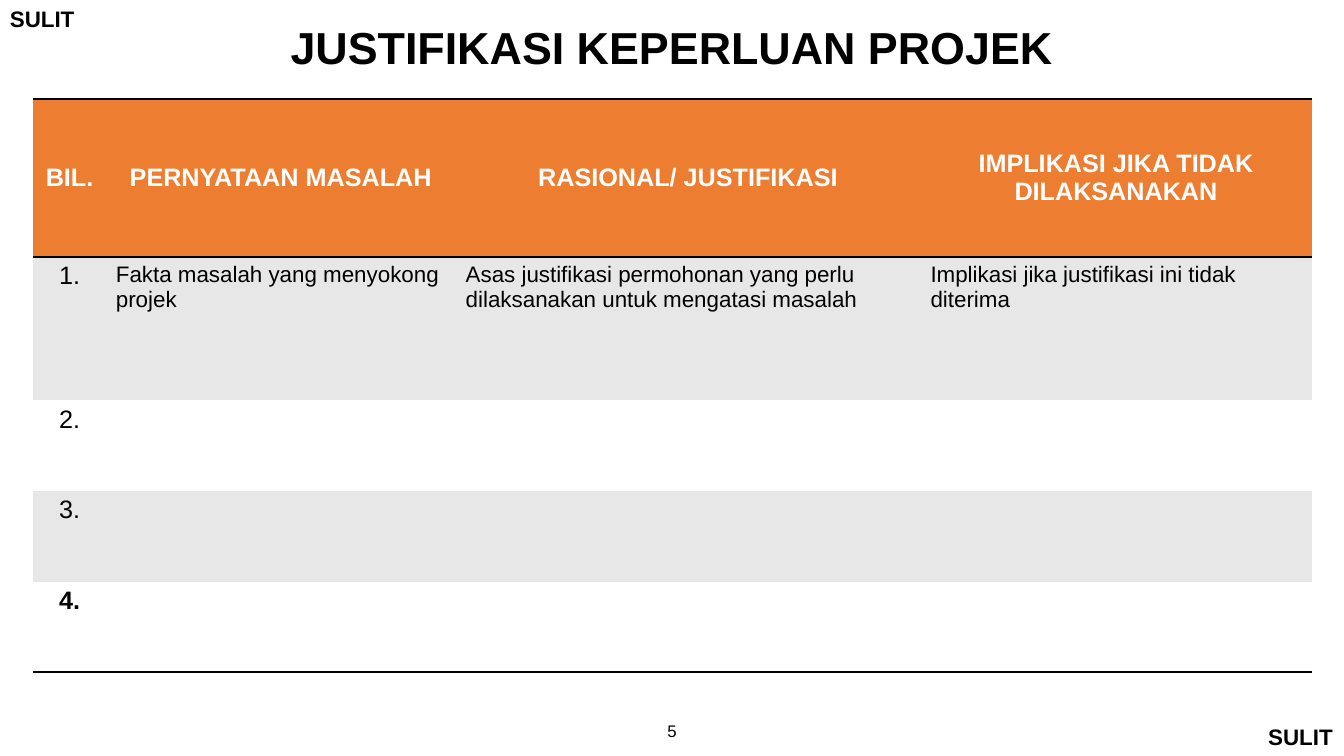
from lxml import etree
from pptx import Presentation
from pptx import util as u
from pptx.dml.color import RGBColor
from pptx.enum import text
from pptx.oxml.ns import qn

COLOURS = {"ink": "000000", "white": "FFFFFF", "header": "ED7D31", "band": "E7E7E7"}
CENTER, LEFT = text.PP_ALIGN.CENTER, text.PP_ALIGN.LEFT
TOP, MIDDLE = text.MSO_ANCHOR.TOP, text.MSO_ANCHOR.MIDDLE


class Deck:
    """Holds the style and the current page."""

    font = "Arial"

    def __init__(self, width, height):
        self.show = Presentation()
        self.show.slide_width = u.Inches(width)
        self.show.slide_height = u.Inches(height)
        self.page = self.show.slides.add_slide(self.show.slide_layouts[6])

    def add_words(self, frame, words, size, bold=False, colour="ink", align=LEFT, spacing=1.0):
        para = frame.paragraphs[0]
        for name, value in {"alignment": align, "line_spacing": spacing}.items():
            setattr(para, name, value)
        span = para.add_run()
        span.text = words
        style = {"name": self.font, "size": u.Pt(size), "bold": bold}
        for name, value in style.items():
            setattr(span.font, name, value)
        span.font.color.rgb = RGBColor.from_string(COLOURS[colour])

    def label(self, place, words, size, wrap=True, anchor=TOP, **style):
        box = self.page.shapes.add_textbox(*map(u.Inches, place))
        for name, value in {"word_wrap": wrap, "vertical_anchor": anchor}.items():
            setattr(box.text_frame, name, value)
        self.add_words(box.text_frame, words, size, **style)

    def border(self, cell, ruled):
        properties = cell._tc.get_or_add_tcPr()
        for side in ("L", "R", "T", "B"):
            line = etree.SubElement(properties, qn(f"a:ln{side}"), w=str(u.Pt(2)))
            if side in ruled:
                fill = etree.SubElement(line, qn("a:solidFill"))
                etree.SubElement(fill, qn("a:srgbClr"), val=COLOURS["ink"])
            else:
                etree.SubElement(line, qn("a:noFill"))

    def cell(self, cell, words, fill, ruled, anchor=TOP, **style):
        self.border(cell, ruled)
        cell.fill.solid()
        cell.fill.fore_color.rgb = RGBColor.from_string(COLOURS[fill])
        cell.vertical_anchor = anchor
        if words:
            self.add_words(cell.text_frame, words, **style)

    def table(self, left, top, widths, heights):
        grid = self.page.shapes.add_table(
            len(heights), len(widths), u.Inches(left), u.Inches(top),
            u.Inches(sum(widths)), u.Inches(sum(heights))).table
        for name in ("first_row", "horz_banding"):
            setattr(grid, name, False)
        for column, width in zip(grid.columns, widths):
            column.width = u.Inches(width)
        for row, height in zip(grid.rows, heights):
            row.height = u.Inches(height)
        return grid


def main():
    deck = Deck(13.33, 7.5)

    # Classification marks in opposite corners
    for left, top in ((0, 0), (12.48, 7.13)):
        deck.label((left, top, 0.85, 0.37), "SULIT", 16, wrap=False, bold=True)

    # Title
    deck.label((0.98, 0.08, 11.37, 0.84), "JUSTIFIKASI KEPERLUAN PROJEK", 32,
               anchor=MIDDLE, bold=True, align=CENTER, spacing=0.9)

    # Justification table
    headings = ["BIL.", "PERNYATAAN MASALAH", "RASIONAL/ JUSTIFIKASI",
                "IMPLIKASI JIKA TIDAK DILAKSANAKAN"]
    rows = [
        ["1.", "Fakta masalah yang menyokong projek",
         "Asas justifikasi permohonan yang perlu dilaksanakan untuk mengatasi masalah",
         "Implikasi jika justifikasi ini tidak diterima"],
        *([f"{number}.", "", "", ""] for number in (2, 3, 4)),
    ]
    grid = deck.table(0.33, 0.98, [0.72, 3.47, 4.61, 3.88], [1.57, 1.42, 0.9, 0.9, 0.9])
    for column, heading in enumerate(headings):
        deck.cell(grid.cell(0, column), heading, "header", "TB", MIDDLE,
                  size=18, bold=True, colour="white", align=CENTER)
    last = len(rows)
    for index, row in enumerate(rows, 1):
        fill = "band" if index % 2 else "white"
        ruled = {1: "T", last: "B"}.get(index, "")
        for column, words in enumerate(row):
            numbering = column == 0
            deck.cell(grid.cell(index, column), words, fill, ruled,
                      size=18 if numbering else 16, bold=index == last,
                      align=CENTER if numbering else LEFT)

    # Page number
    deck.label((6.4, 7.1, 0.53, 0.4), "5", 12, align=CENTER)

    deck.show.save("out.pptx")


if __name__ == "__main__":
    main()
